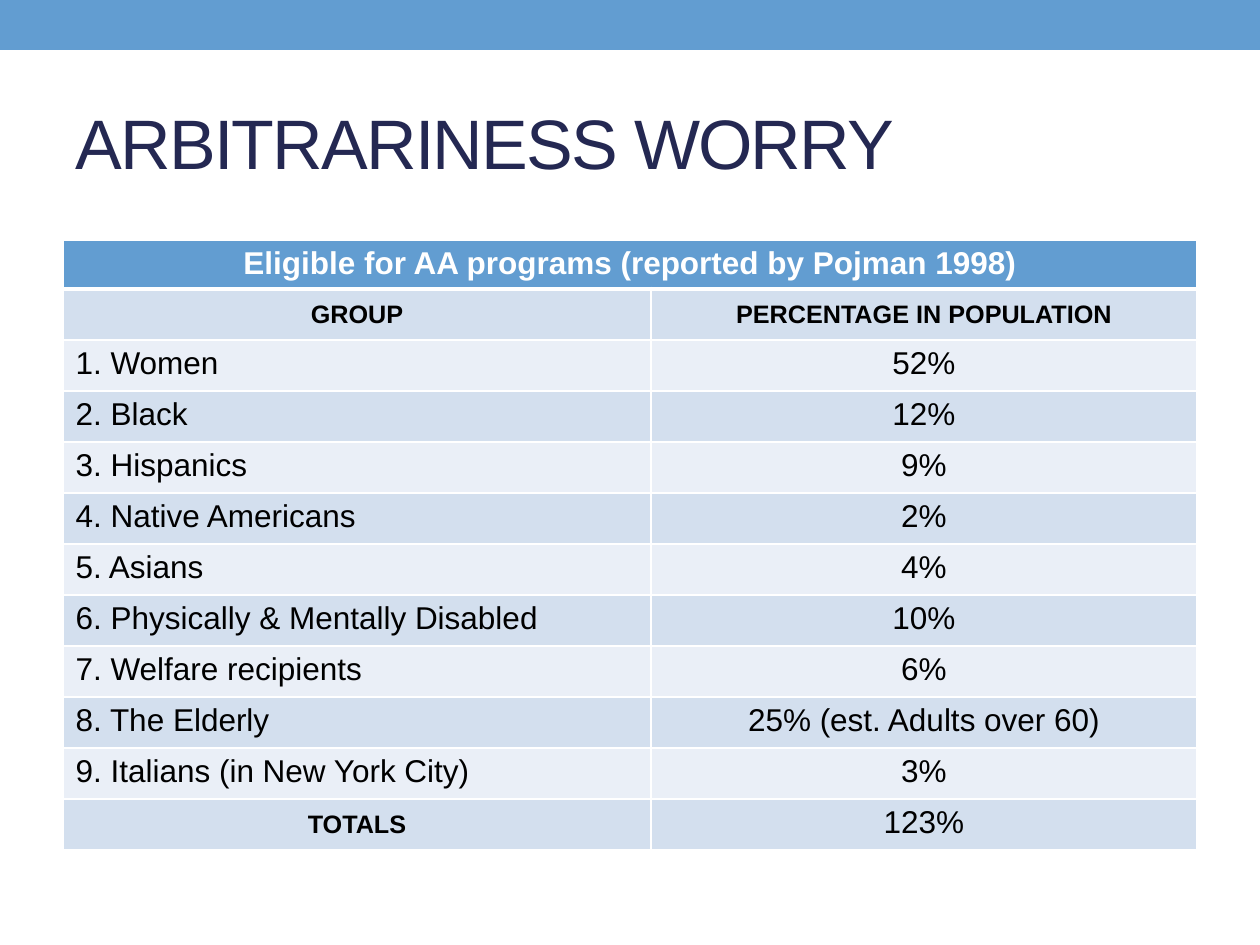
from lxml.etree import SubElement
from pptx import Presentation
from pptx.dml.color import RGBColor
from pptx.enum.shapes import MSO_SHAPE as SHAPE
from pptx.enum.text import MSO_ANCHOR as ANCHOR, PP_ALIGN as ALIGN
from pptx.oxml.ns import qn
from pptx.util import Pt

EMU_PER_PX = 914400 / 126
FONT = "Arial"
BLUE = RGBColor(0x62, 0x9D, 0xD1)
NAVY = RGBColor(0x24, 0x28, 0x52)
WHITE = RGBColor(0xFF, 0xFF, 0xFF)
BLACK = RGBColor(0x00, 0x00, 0x00)
BANDS = (RGBColor(0xEA, 0xEF, 0xF7), RGBColor(0xD3, 0xDF, 0xEE))
COLUMN_WIDTHS = (588, 546)
HEADER_HEIGHT, ROW_HEIGHT = 49, 51
HEADING = "Eligible for AA programs (reported by Pojman 1998)"
LABELS = ("group", "percentage in population", "totals")
ROWS = (
    ("group", "percentage in population"),
    ("1. Women", "52%"),
    ("2. Black", "12%"),
    ("3. Hispanics", "9%"),
    ("4. Native Americans", "2%"),
    ("5. Asians", "4%"),
    ("6. Physically & Mentally Disabled", "10%"),
    ("7. Welfare recipients", "6%"),
    ("8. The Elderly", "25% (est. Adults over 60)"),
    ("9. Italians (in New York City)", "3%"),
    ("totals", "123%"),
)


def px(n):
    """Turn pixels into EMU."""
    return round(n * EMU_PER_PX)


def format_run(r, size, color, bold=False):
    """Set the font of a run."""
    r.font.name, r.font.size, r.font.bold = FONT, Pt(size), bold
    r.font.color.rgb = color


def add_band(s):
    """Draw the band across the top of the slide."""
    sp = s.shapes.add_shape(SHAPE.RECTANGLE, 0, 0, px(1260), px(50))
    sp.shadow.inherit = False
    sp.fill.solid()
    sp.fill.fore_color.rgb = BLUE
    sp.line.fill.background()


def set_title(s, text):
    """Place and format the title."""
    sp = s.shapes.title
    sp.left, sp.top, sp.width, sp.height = px(63), px(73), px(1134), px(136)
    tf = sp.text_frame
    tf.text = text
    tf.vertical_anchor = ANCHOR.MIDDLE
    p = tf.paragraphs[0]
    p.alignment = ALIGN.LEFT
    r = p.runs[0]
    format_run(r, 40, NAVY)
    r.font._element.set("spc", "-100")


def set_borders(cell, bottom=1):
    """Draw white borders round a cell."""
    tc_pr = cell._tc.get_or_add_tcPr()
    widths = {"a:lnL": 1, "a:lnR": 1, "a:lnT": 1, "a:lnB": bottom}
    for i, (tag, width) in enumerate(widths.items()):
        ln = SubElement(tc_pr, qn(tag), w=str(Pt(width)))
        fill = SubElement(ln, qn("a:solidFill"))
        SubElement(fill, qn("a:srgbClr"), val=str(WHITE))
        tc_pr.insert(i, ln)


def set_cell(cell, text, fill, color=BLACK, bold=False, align=ALIGN.CENTER):
    """Fill a cell and write its text."""
    cell.fill.solid()
    cell.fill.fore_color.rgb = fill
    cell.text_frame.text = text
    p = cell.text_frame.paragraphs[0]
    p.alignment = align
    r = p.runs[0]
    format_run(r, 18, color, bold)
    if text in LABELS:
        r.font._element.set("cap", "small")


def add_groups_table(s):
    """Add the table of groups and percentages."""
    height = HEADER_HEIGHT + ROW_HEIGHT * len(ROWS)
    table = s.shapes.add_table(len(ROWS) + 1, 2, px(63), px(240),
                               px(sum(COLUMN_WIDTHS)), px(height)).table
    for column, width in zip(table.columns, COLUMN_WIDTHS):
        column.width = px(width)
    for row in table.rows:
        row.height = px(ROW_HEIGHT)
    table.rows[0].height = px(HEADER_HEIGHT)
    table.cell(0, 0).merge(table.cell(0, 1))
    set_cell(table.cell(0, 0), HEADING, BLUE, WHITE, bold=True)
    for i, row in enumerate(ROWS, 1):
        for j, text in enumerate(row):
            label = text in LABELS
            align = ALIGN.CENTER if j or label else ALIGN.LEFT
            set_cell(table.cell(i, j), text, BANDS[i % 2], bold=label, align=align)
    for i, row in enumerate(table.rows):
        for cell in row.cells:
            set_borders(cell, bottom=1 if i else 3)


def main():
    """Build and save the slide."""
    prs = Presentation()
    prs.slide_width, prs.slide_height = px(1260), px(945)
    s = prs.slides.add_slide(prs.slide_layouts[5])
    add_band(s)
    set_title(s, "ARBITRARINESS WORRY")
    add_groups_table(s)
    prs.save("out.pptx")


if __name__ == "__main__":
    main()
